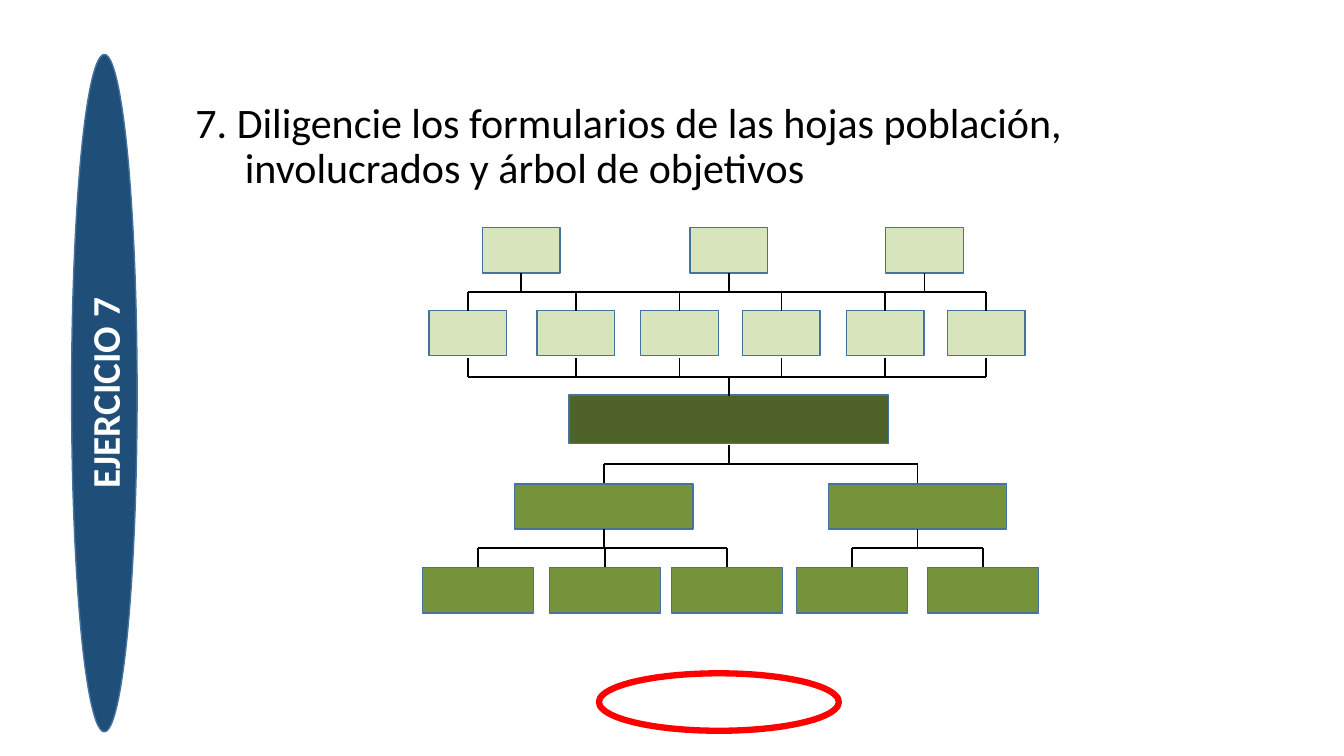
from pptx import Presentation
from pptx.dml.color import RGBColor
from pptx.enum.shapes import MSO_CONNECTOR as Link, MSO_SHAPE as Form
from pptx.enum.text import MSO_ANCHOR as Anchor, PP_ALIGN as Align
from pptx.oxml.ns import qn
from pptx.util import Inches, Pt
from lxml.etree import SubElement

BLACK = RGBColor(0x00, 0x00, 0x00)
WHITE = RGBColor(0xFF, 0xFF, 0xFF)
NAVY = RGBColor(0x1F, 0x4E, 0x79)
BLUE = RGBColor(0x43, 0x73, 0x9E)
RED = RGBColor(0xFF, 0x00, 0x00)
PALE = RGBColor(0xD8, 0xE4, 0xBC)
GREEN = RGBColor(0x76, 0x93, 0x3C)
DARK = RGBColor(0x4F, 0x62, 0x28)

# Centres of the boxes, level by level
ENDS = [5.17, 7.23, 9.17]
EFFECTS = [4.64, 5.71, 6.74, 7.75, 8.78, 9.78]
CORE = 7.23
MEANS = [5.99, 9.1]
ACTIONS = [[4.74, 6, 7.21], [8.45, 9.75]]
STEM = 0.19


def write(frame, text, size=30, color=BLACK, bold=False, align=Align.LEFT,
          anchor=Anchor.MIDDLE, hang=0, spacing=None):
    frame.word_wrap = True
    frame.vertical_anchor = anchor
    para = frame.paragraphs[0]
    para.alignment = align
    para.line_spacing = spacing
    if hang:
        props = para._p.get_or_add_pPr()
        props.set("marL", str(Inches(hang)))
        props.set("indent", str(-Inches(hang)))
    run = para.add_run()
    run.text = text
    run.font.name = "Calibri"
    run.font.size = Pt(size)
    run.font.bold = bold
    run.font.color.rgb = color


class Page:
    def __init__(self, slide):
        self.shapes = slide.shapes

    def text(self, x, y, w, h, text, **style):
        box = self.shapes.add_textbox(Inches(x), Inches(y), Inches(w), Inches(h))
        write(box.text_frame, text, **style)
        return box

    def shape(self, form, x, y, w, h, fill=None, edge=BLUE, width=1):
        item = self.shapes.add_shape(form, Inches(x), Inches(y), Inches(w), Inches(h))
        item.shadow.inherit = False
        if fill is None:
            item.fill.background()
        else:
            item.fill.solid()
            item.fill.fore_color.rgb = fill
        item.line.color.rgb = edge
        item.line.width = Pt(width)
        return item

    def row(self, mids, y, w, fill, h=0.45):
        """Draw equal boxes centred on the given positions."""
        for mid in mids:
            self.shape(Form.RECTANGLE, mid - w / 2, y, w, h, fill)

    def line(self, x1, y1, x2, y2):
        item = self.shapes.add_connector(
            Link.STRAIGHT, Inches(x1), Inches(y1), Inches(x2), Inches(y2))
        item.line.color.rgb = BLACK
        item.line.width = Pt(1.25)
        SubElement(item._element.spPr, qn("a:effectLst"))

    def bus(self, y, above, below):
        """Join the boxes above and below through one level line."""
        mids = above + below
        self.line(min(mids), y, max(mids), y)
        for mid in above:
            self.line(mid, y - STEM, mid, y)
        for mid in below:
            self.line(mid, y, mid, y + STEM)


def main():
    deck = Presentation()
    deck.slide_width, deck.slide_height = Inches(13.33), Inches(7.5)
    page = Page(deck.slides.add_slide(deck.slide_layouts[6]))

    title = page.text(
        1.84, 0.9, 10.88, 1.87,
        "7. Diligencie los formularios de las hojas población, "
        "involucrados y árbol de objetivos",
        hang=0.49, spacing=0.9, anchor=Anchor.TOP)
    title.text_frame.margin_top = Inches(0.11)

    banner = page.shape(Form.OVAL, 0.71, 0.54, 0.65, 6.72, NAVY)
    write(banner.text_frame, "EJERCICIO 7", size=28, color=WHITE, bold=True,
          align=Align.CENTER)
    banner.text_frame._txBody.bodyPr.set("vert", "vert270")
    page.shape(Form.OVAL, 5.94, 6.68, 2.38, 0.57, edge=RED, width=4.5)

    page.row(ENDS, 2.26, 0.77, PALE)
    page.row(EFFECTS, 3.08, 0.77, PALE)
    page.row([CORE], 3.92, 3.17, DARK, h=0.48)
    page.row(MEANS, 4.8, 1.77, GREEN)

    page.bus(2.9, ENDS, EFFECTS)
    page.bus(3.74, EFFECTS, [CORE])
    page.bus(4.6, [CORE], MEANS)
    for mean, group in zip(MEANS, ACTIONS):
        page.row(group, 5.63, 1.1, GREEN)
        page.bus(5.44, [mean], group)

    deck.save("out.pptx")


if __name__ == "__main__":
    main()
